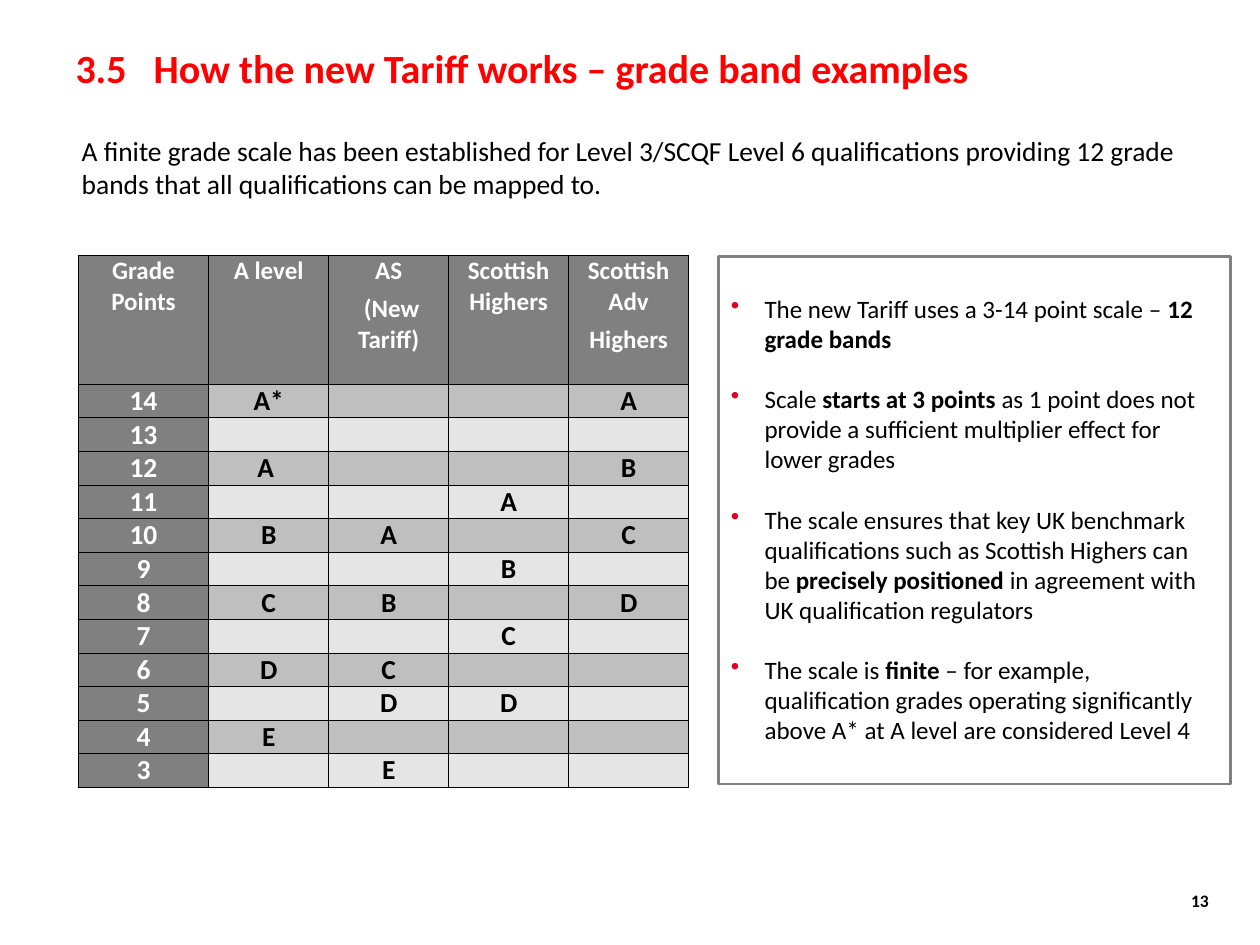
from dataclasses import dataclass

from pptx import Presentation
from pptx import util as u
from pptx.dml.color import RGBColor
from pptx.enum import shapes, text
from pptx.oxml import parse_xml
from pptx.oxml.ns import nsdecls


@dataclass(frozen=True)
class Theme:
    font: str = "Calibri"
    title: str = "FF0000"
    ink: str = "000000"
    white: str = "FFFFFF"
    grey: str = "808080"
    bullet: str = "E00023"
    bands: tuple = ("BFBFBF", "E5E5E5")
    title_size: int = 32
    body_size: int = 22
    small_size: int = 20
    number_size: int = 14


THEME = Theme()
ALIGN = text.PP_ALIGN

HEADERS = ["Grade Points", "A level", "AS\n (New Tariff)", "Scottish Highers",
           "Scottish Adv\nHighers"]
TOP_POINTS, LOW_POINTS = 14, 3
GRADES = [
    {14: "A*", 12: "A ", 10: "B", 8: "C", 6: "D", 4: "E"},
    {10: "A", 8: "B", 6: "C", 5: "D", 3: "E"},
    {11: "A", 9: "B", 7: "C", 5: "D"},
    {14: "A", 12: "B", 10: "C", 8: "D"},
]
NOTES = """The new Tariff uses a 3-14 point scale – **12 grade bands**
Scale **starts at 3 points **as 1 point does not provide a sufficient multiplier effect for lower grades
The scale ensures that key UK benchmark qualifications such as Scottish Highers can be **precisely \
positioned **in agreement with UK qualification regulators
The scale is **finite **– for example, qualification grades operating significantly above A* at A level \
are considered Level 4"""


def add_bullet(p, indent):
    pPr = p._p.get_or_add_pPr()
    pPr.set("marL", str(u.Pt(indent)))
    pPr.set("indent", str(-u.Pt(indent)))
    pPr.append(parse_xml(f'<a:buClr {nsdecls("a")}><a:srgbClr val="{THEME.bullet}"/></a:buClr>'))
    pPr.append(parse_xml(f'<a:buChar {nsdecls("a")} char="•"/>'))


def add_tab_stop(p, position):
    p._p.get_or_add_pPr().append(parse_xml(
        f'<a:tabLst {nsdecls("a")}><a:tab pos="{u.Pt(position)}" algn="l"/></a:tabLst>'))


def write_text(tf, content, size=THEME.body_size, color=THEME.ink, bold=False,
               align=ALIGN.LEFT, gap=0, bullet_indent=None, tab=None):
    """Write one paragraph per line; text between ** marks switches bold."""
    for i, line in enumerate(content.split("\n")):
        p = tf.add_paragraph() if i else tf.paragraphs[0]
        p.alignment = align
        if i:
            p.space_before = u.Pt(gap)
        if bullet_indent:
            add_bullet(p, bullet_indent)
        if tab:
            add_tab_stop(p, tab)
        for j, part in enumerate(line.split("**")):
            if not part:
                continue
            r = p.add_run()
            r.text = part
            r.font.name = THEME.font
            r.font.size = u.Pt(size)
            r.font.bold = bold != (j % 2 == 1)
            r.font.color.rgb = RGBColor.from_string(color)


def set_frame(tf, top=5, anchor=text.MSO_ANCHOR.TOP):
    tf.word_wrap = True
    tf.vertical_anchor = anchor
    tf.margin_left = tf.margin_right = u.Pt(10)
    tf.margin_top, tf.margin_bottom = u.Pt(top), u.Pt(5)


def add_text(s, x, y, w, h, content, anchor=text.MSO_ANCHOR.TOP, **fmt):
    sp = s.shapes.add_textbox(u.Pt(x), u.Pt(y), u.Pt(w), u.Pt(h))
    set_frame(sp.text_frame, anchor=anchor)
    write_text(sp.text_frame, content, **fmt)


def add_notes_panel(s, x, y, w, h):
    sp = s.shapes.add_shape(shapes.MSO_SHAPE.RECTANGLE, u.Pt(x), u.Pt(y), u.Pt(w), u.Pt(h))
    sp.shadow.inherit = False
    sp.fill.background()
    sp.line.color.rgb = RGBColor.from_string(THEME.grey)
    sp.line.width = u.Pt(2.25)
    set_frame(sp.text_frame, top=29.4)
    write_text(sp.text_frame, NOTES, size=THEME.small_size, gap=24.4, bullet_indent=27)


def style_cell(cell, fill):
    cell.margin_left = cell.margin_right = u.Pt(7.2)
    cell.margin_top = cell.margin_bottom = 0
    tcPr = cell._tc.get_or_add_tcPr()
    for side in "LRTB":
        tcPr.append(parse_xml(
            f'<a:ln{side} {nsdecls("a")} w="{u.Pt(1)}"><a:solidFill>'
            f'<a:srgbClr val="{THEME.ink}"/></a:solidFill></a:ln{side}>'))
    cell.fill.solid()
    cell.fill.fore_color.rgb = RGBColor.from_string(fill)


def add_grade_table(s, x, y):
    widths = [104.4] + [96] * len(GRADES)
    rows = [HEADERS] + [[str(n)] + [column.get(n, "") for column in GRADES]
                        for n in range(TOP_POINTS, LOW_POINTS - 1, -1)]
    heights = [103] + [26.9] * (len(rows) - 1)
    table = s.shapes.add_table(len(rows), len(widths), u.Pt(x), u.Pt(y),
                               u.Pt(sum(widths)), u.Pt(sum(heights))).table
    table.first_row = table.horz_banding = False
    for column, width in zip(table.columns, widths):
        column.width = u.Pt(width)
    for i, (row, values) in enumerate(zip(table.rows, rows)):
        row.height = u.Pt(heights[i])
        for j, value in enumerate(values):
            heading = i == 0 or j == 0
            cell = row.cells[j]
            style_cell(cell, THEME.grey if heading else THEME.bands[(i - 1) % 2])
            write_text(cell.text_frame, value, bold=True, align=ALIGN.CENTER, gap=6,
                       size=THEME.body_size if i else THEME.small_size,
                       color=THEME.white if heading else THEME.ink)


def main():
    prs = Presentation()
    prs.slide_width, prs.slide_height = u.Pt(1008), u.Pt(756)
    s = prs.slides.add_slide(prs.slide_layouts[6])
    add_text(s, 50.4, 30.2, 907, 70, "3.5\tHow the new Tariff works – grade band examples",
             size=THEME.title_size, color=THEME.title, bold=True, tab=62.5)
    add_text(s, 916.6, 700.6, 60.5, 40.3, "13", size=THEME.number_size, bold=True,
             align=ALIGN.RIGHT, anchor=text.MSO_ANCHOR.MIDDLE)
    add_notes_panel(s, 574.6, 205.2, 409.7, 422)
    add_text(s, 55.4, 102.2, 898, 93.6,
             "A finite grade scale has been established for Level 3/SCQF Level 6 qualifications "
             "providing 12 grade bands that all qualifications can be mapped to.")
    add_grade_table(s, 62.6, 204.5)
    prs.save("out.pptx")


if __name__ == "__main__":
    main()
